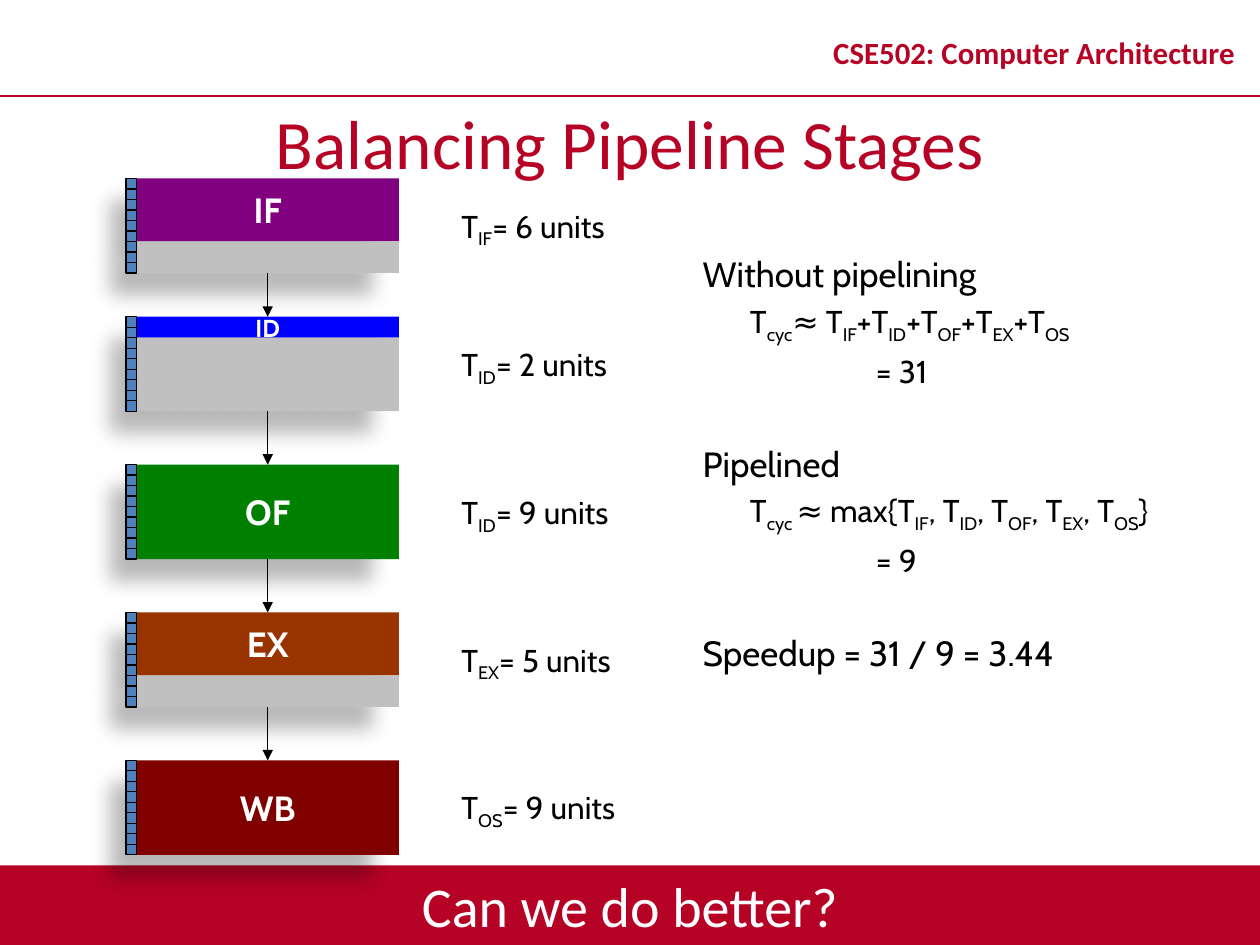
from dataclasses import dataclass

from lxml.etree import SubElement
from pptx import Presentation
from pptx.dml.color import RGBColor
from pptx.enum.shapes import MSO_CONNECTOR, MSO_SHAPE
from pptx.enum.text import MSO_ANCHOR, MSO_AUTO_SIZE, PP_ALIGN
from pptx.oxml import parse_xml
from pptx.oxml.ns import nsdecls, qn
from pptx.util import Pt

RED, WHITE, BLACK, GRAY = "B60225", "FFFFFF", "000000", "C0C0C0"
LATCH_BLUE = "4F81BD"
STAGE_LEFT, STAGE_WIDTH, UNIT, SLOTS = 78, 150, 6, 9


@dataclass
class Stage:
    name: str
    top: float
    units: int      # slots filled by the coloured block
    color: str
    timing: str     # text between underscores is subscript
    size: float = 20


@dataclass
class Line:
    text: str
    size: float
    indent: float = 0
    before: float = 4


STAGES = [
    Stage("IF", 102, 6, "800080", "T_IF_= 6 units"),
    Stage("ID", 181, 2, "0000FF", "T_ID_= 2 units", 14),
    Stage("OF", 265.5, 9, "008000", "T_ID_= 9 units"),
    Stage("EX", 350, 6, "993300", "T_EX_= 5 units"),
    Stage("WB", 434.5, 9, "800000", "T_OS_= 9 units"),
]

ANALYSIS = [
    Line("Without pipelining", 20, before=0),
    Line("T_cyc_≈ T_IF_+T_ID_+T_OF_+T_EX_+T_OS_", 18, 27),
    Line("= 31", 18, 99),
    Line("Pipelined", 20, before=30),
    Line("T_cyc _≈ max{T_IF_, T_ID_, T_OF_, T_EX_, T_OS_}", 18, 27),
    Line("= 9", 18, 99),
    Line("Speedup = 31 / 9 = 3.44", 20, before=30),
]


def rgb(color: str) -> RGBColor:
    return RGBColor.from_string(color)


def set_font(font, size: float, color: str, name: str = "Cabin", bold: bool = False):
    font.size, font.name, font.bold = Pt(size), name, bold
    font.color.rgb = rgb(color)


def add_rect(s, left, top, width, height, fill: str, line: str = ""):
    sp = s.shapes.add_shape(MSO_SHAPE.RECTANGLE, Pt(left), Pt(top), Pt(width), Pt(height))
    sp.shadow.inherit = False
    sp.fill.solid()
    sp.fill.fore_color.rgb = rgb(fill)
    if line:
        sp.line.color.rgb = rgb(line)
        sp.line.width = Pt(0.75)
    else:
        sp.line.fill.background()
    return sp


def add_shadow(sp, alpha: int, blur: float, dist: float, angle: int):
    effects = sp._element.spPr.find(qn("a:effectLst"))
    effects.append(parse_xml(
        f'<a:outerShdw {nsdecls("a")} blurRad="{Pt(blur)}" dist="{Pt(dist)}" '
        f'dir="{angle * 60000}" algn="ctr" rotWithShape="0"><a:srgbClr val="{BLACK}">'
        f'<a:alpha val="{alpha * 1000}"/></a:srgbClr></a:outerShdw>'))


def add_line(s, x1, y1, x2, y2, color: str, width: float):
    line = s.shapes.add_connector(MSO_CONNECTOR.STRAIGHT, Pt(x1), Pt(y1), Pt(x2), Pt(y2))
    line.line.color.rgb = rgb(color)
    line.line.width = Pt(width)
    SubElement(line._element.spPr, qn("a:effectLst"))
    return line


def add_arrow(s, start, end):
    arrow = add_line(s, 0, 0, 0, 0, BLACK, 0.75)
    arrow.begin_connect(start, 2)
    arrow.end_connect(end, 0)
    SubElement(arrow.line._get_or_add_ln(), qn("a:tailEnd"), type="triangle")


def write_formula(p, text: str, size: float):
    for i, part in enumerate(text.split("_")):
        if part:
            r = p.add_run()
            r.text = part
            set_font(r.font, size, BLACK)
            if i % 2:
                r._r.get_or_add_rPr().set("baseline", "-25000")


def fill_placeholder(sp, box, text: str, size: float, color: str):
    sp.left, sp.top, sp.width, sp.height = map(Pt, box)
    tf = sp.text_frame
    tf.text = text
    tf.auto_size = MSO_AUTO_SIZE.NONE
    tf.vertical_anchor = MSO_ANCHOR.MIDDLE
    p = tf.paragraphs[0]
    p.alignment = PP_ALIGN.CENTER
    p.space_before = Pt(0)
    set_font(p.runs[0].font, size, color, "Calibri")


def add_text_box(s, left, top, width, height):
    box = s.shapes.add_textbox(Pt(left), Pt(top), Pt(width), Pt(height))
    return box.text_frame


def add_stage(s, stage: Stage):
    """Draw a stage and return its top and bottom blocks."""
    used = stage.units * UNIT
    block = add_rect(s, STAGE_LEFT, stage.top, STAGE_WIDTH, used, stage.color)
    last = block
    if stage.units < SLOTS:
        last = add_rect(s, STAGE_LEFT, stage.top + used, STAGE_WIDTH,
                        SLOTS * UNIT - used, GRAY)
        add_shadow(last, 28, 11.8, 19.7, 141)
    add_shadow(block, 28, 11.8, 19.7, 141)
    tf = block.text_frame
    tf.text = stage.name
    tf.word_wrap = False
    tf.vertical_anchor = MSO_ANCHOR.MIDDLE
    p = tf.paragraphs[0]
    p.alignment = PP_ALIGN.CENTER
    set_font(p.runs[0].font, stage.size, WHITE, bold=True)
    # Pipeline latch
    for i in range(SLOTS):
        add_rect(s, STAGE_LEFT - UNIT, stage.top + i * UNIT, UNIT, UNIT, LATCH_BLUE, BLACK)
    # Timing label
    tf = add_text_box(s, 256.5, stage.top + 12.5, 104, 29)
    tf.word_wrap = False
    write_formula(tf.paragraphs[0], stage.timing, 18)
    return block, last


def add_analysis(s):
    panel = add_rect(s, 394.5, 141, 294, 276.5, WHITE)
    color = panel._element.spPr.find(qn("a:solidFill"))[0]
    SubElement(color, qn("a:alpha"), val="80000")
    tf = panel.text_frame
    tf.vertical_anchor = MSO_ANCHOR.TOP
    for i, line in enumerate(ANALYSIS):
        p = tf.add_paragraph() if i else tf.paragraphs[0]
        p.alignment = PP_ALIGN.LEFT
        p.space_before = Pt(line.before)
        p._p.get_or_add_pPr().set("marL", str(Pt(line.indent)))
        write_formula(p, line.text, line.size)


def main():
    prs = Presentation()
    prs.slide_width, prs.slide_height = Pt(720), Pt(540)
    s = prs.slides.add_slide(prs.slide_layouts[1])

    # Footer band, kept behind the placeholders
    band_box = (0, 494.5, 720, 45.5)
    band = add_rect(s, *band_box, RED)
    add_shadow(band, 35, 3.1, 1.8, 90)
    s.shapes._spTree.insert(2, band._element)

    # Course header
    add_line(s, 0, 54.7, 720, 54.7, RED, 1)
    tf = add_text_box(s, 462, 9.5, 258, 45)
    tf.text = "CSE502: Computer Architecture"
    tf.word_wrap = True
    tf.vertical_anchor = MSO_ANCHOR.MIDDLE
    p = tf.paragraphs[0]
    p.alignment = PP_ALIGN.CENTER
    p.line_spacing = 0.8
    set_font(p.runs[0].font, 17.6, RED, "Calibri", True)

    # Title and closing question
    title, body = s.shapes.title, s.placeholders[1]
    fill_placeholder(title, (49.5, 53.5, 621, 55.5), "Balancing Pipeline Stages", 39.6, RED)
    fill_placeholder(body, band_box, "Can we do better?", 32, WHITE)
    body.text_frame.margin_top = body.text_frame.margin_bottom = 0
    pPr = body.text_frame.paragraphs[0]._p.get_or_add_pPr()
    pPr.set("marL", "0")
    pPr.set("indent", "0")
    SubElement(pPr, qn("a:buNone"))

    # Cycle time analysis, then the pipeline
    add_analysis(s)
    blocks = [add_stage(s, stage) for stage in STAGES]
    for (_, bottom), (top, _) in zip(blocks, blocks[1:]):
        add_arrow(s, bottom, top)

    prs.save("out.pptx")


if __name__ == "__main__":
    main()
